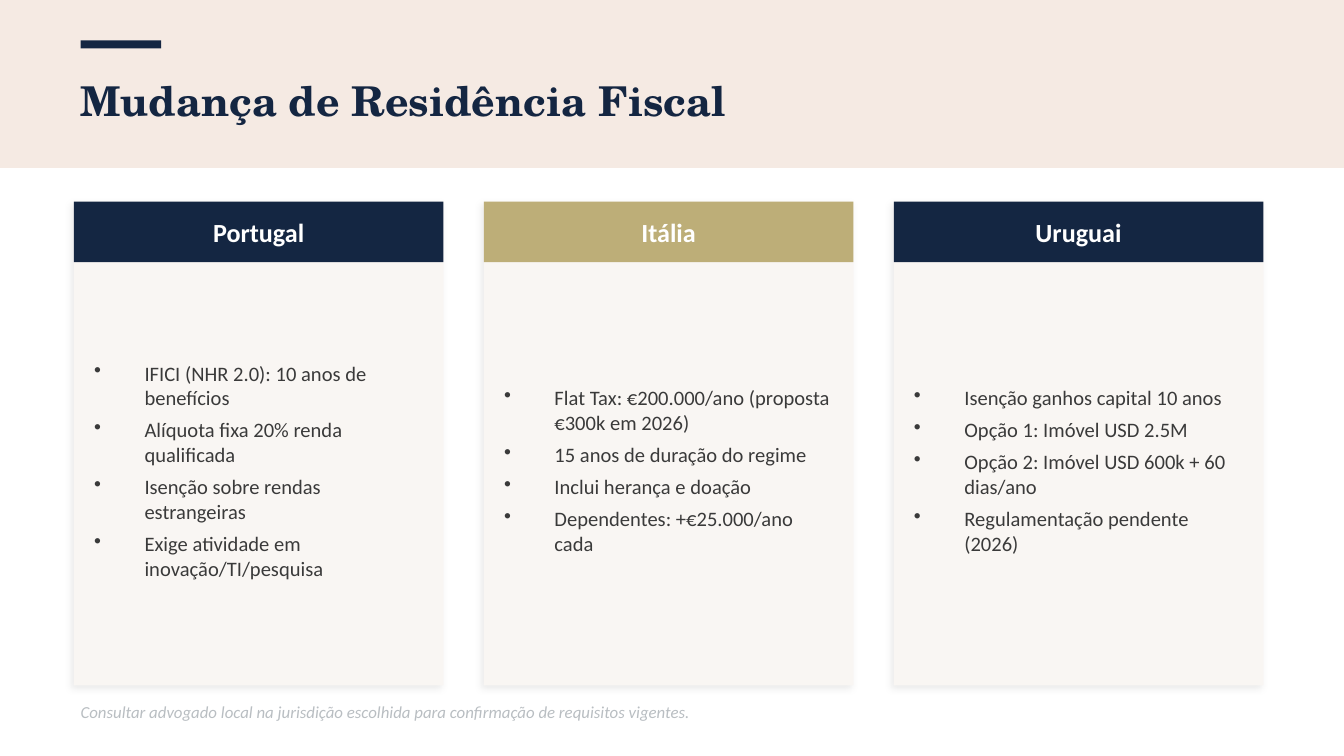
from lxml.etree import SubElement
from pptx import Presentation
from pptx.dml.color import RGBColor
from pptx.enum.shapes import MSO_SHAPE
from pptx.enum.text import MSO_ANCHOR, MSO_AUTO_SIZE, PP_ALIGN
from pptx.oxml.ns import qn
from pptx.util import Pt

PX = 4572  # 200 px to the inch
NAVY = RGBColor(0x14, 0x26, 0x42)
GOLD = RGBColor(0xBD, 0xAE, 0x78)
BLUSH = RGBColor(0xF5, 0xEA, 0xE3)
CREAM = RGBColor(0xF9, 0xF6, 0xF3)
WHITE = RGBColor(0xFF, 0xFF, 0xFF)
INK = RGBColor(0x3A, 0x3A, 0x3A)
GREY = RGBColor(0xB9, 0xBE, 0xC2)

CARDS = [
    ("Portugal", NAVY, [
        "IFICI (NHR 2.0): 10 anos de benefícios",
        "Alíquota fixa 20% renda qualificada",
        "Isenção sobre rendas estrangeiras",
        "Exige atividade em inovação/TI/pesquisa",
    ]),
    ("Itália", GOLD, [
        "Flat Tax: €200.000/ano (proposta €300k em 2026)",
        "15 anos de duração do regime",
        "Inclui herança e doação",
        "Dependentes: +€25.000/ano cada",
    ]),
    ("Uruguai", NAVY, [
        "Isenção ganhos capital 10 anos",
        "Opção 1: Imóvel USD 2.5M",
        "Opção 2: Imóvel USD 600k + 60 dias/ano",
        "Regulamentação pendente (2026)",
    ]),
]

prs = Presentation()
prs.slide_width, prs.slide_height = 2000 * PX, 1125 * PX
slide = prs.slides.add_slide(prs.slide_layouts[5])
shapes = slide.shapes


def add_rect(x, y, w, h, color):
    rect = shapes.add_shape(MSO_SHAPE.RECTANGLE, x * PX, y * PX, w * PX, h * PX)
    rect.shadow.inherit = False
    rect.fill.solid()
    rect.fill.fore_color.rgb = color
    rect.line.fill.background()
    return rect


def set_text(shape, lines, size, color, face="Calibri", align=PP_ALIGN.LEFT, bullet=False):
    """Fill a shape with one paragraph per line, centred vertically, without margins."""
    frame = shape.text_frame
    frame.word_wrap = True
    frame.auto_size = MSO_AUTO_SIZE.NONE
    frame.vertical_anchor = MSO_ANCHOR.MIDDLE
    frame.margin_left = frame.margin_top = frame.margin_right = frame.margin_bottom = 0
    frame.text = "\n".join(lines)
    for para in frame.paragraphs:
        para.alignment = align
        if bullet:
            para.space_after = Pt(4)
            props = para._p.get_or_add_pPr()
            props.set("marL", str(75 * PX))
            props.set("indent", str(-75 * PX))
            SubElement(props, qn("a:buChar"), char="•")
        para.font.name = face
        para.font.size = Pt(size)
        para.font.color.rgb = color
    return frame.paragraphs[0].font


# Header
add_rect(0, 0, 2000, 250, BLUSH)
add_rect(120, 60, 120, 12, NAVY)
title = shapes.title
title.left, title.top, title.width, title.height = 120 * PX, 84 * PX, 1760 * PX, 130 * PX
font = set_text(title, ["Mudança de Residência Fiscal"], 22, NAVY, "TeX Gyre Schola")
font.bold = True
shapes._spTree.append(title._element)  # bring the title in front of its band

# Country cards
for i, (name, color, points) in enumerate(CARDS):
    x = 110 + 610 * i
    card = add_rect(x, 300, 550, 720, CREAM)
    effects = card._element.spPr.find(qn("a:effectLst"))
    shadow = SubElement(effects, qn("a:outerShdw"), blurRad=str(Pt(4)), dist=str(Pt(2)),
                        dir=str(135 * 60000), algn="bl", rotWithShape="0")
    black = SubElement(shadow, qn("a:srgbClr"), val="000000")
    SubElement(black, qn("a:alpha"), val="8000")

    head = add_rect(x, 300, 550, 90, color)
    set_text(head, [name], 14, WHITE, align=PP_ALIGN.CENTER).bold = True
    body = shapes.add_textbox((x + 30) * PX, 420 * PX, 490 * PX, 560 * PX)
    set_text(body, points, 11, INK, bullet=True)

# Footnote
note = shapes.add_textbox(120 * PX, 1030 * PX, 1760 * PX, 60 * PX)
set_text(note, ["Consultar advogado local na jurisdição escolhida para confirmação "
                "de requisitos vigentes."], 9, GREY).italic = True

prs.save("out.pptx")
